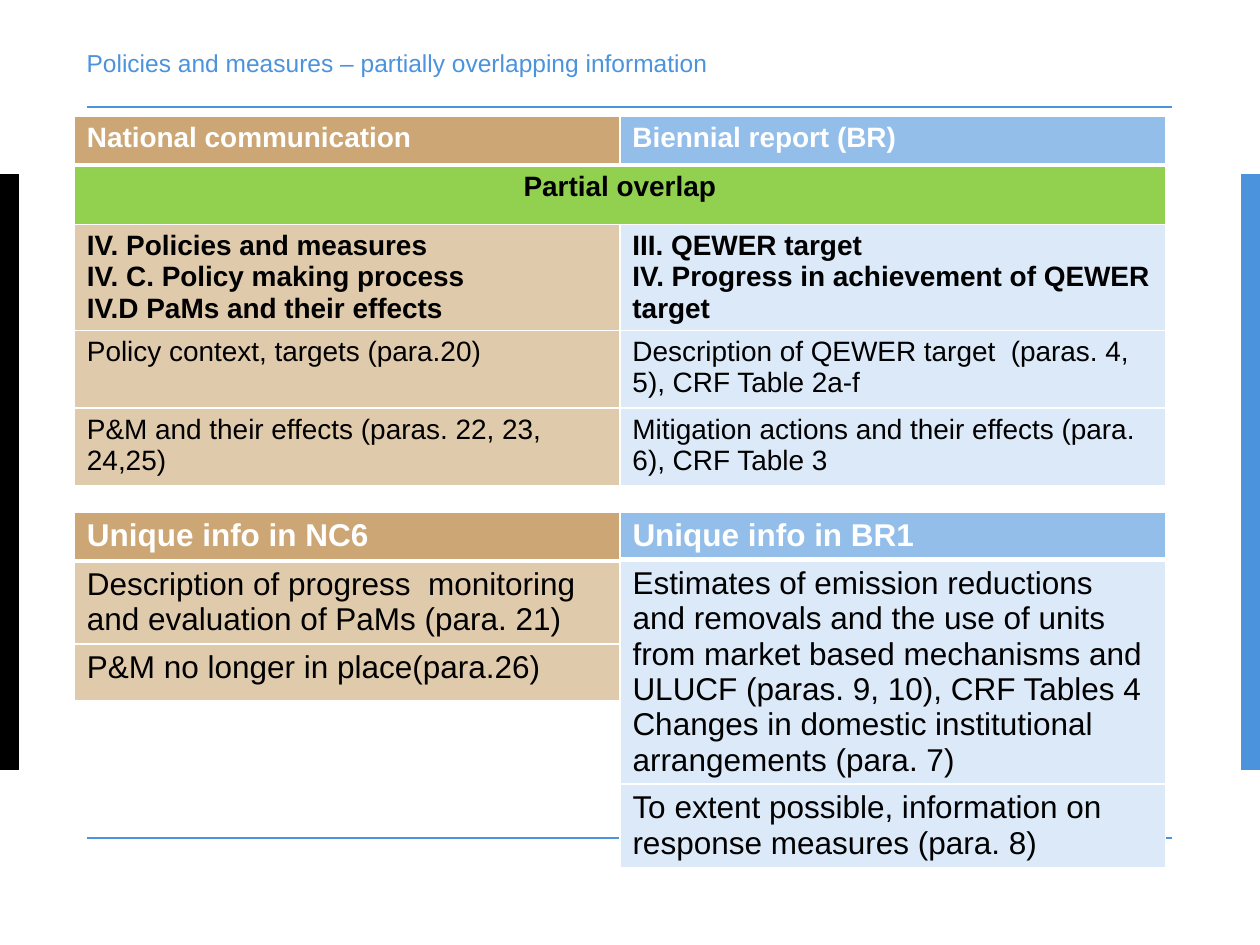
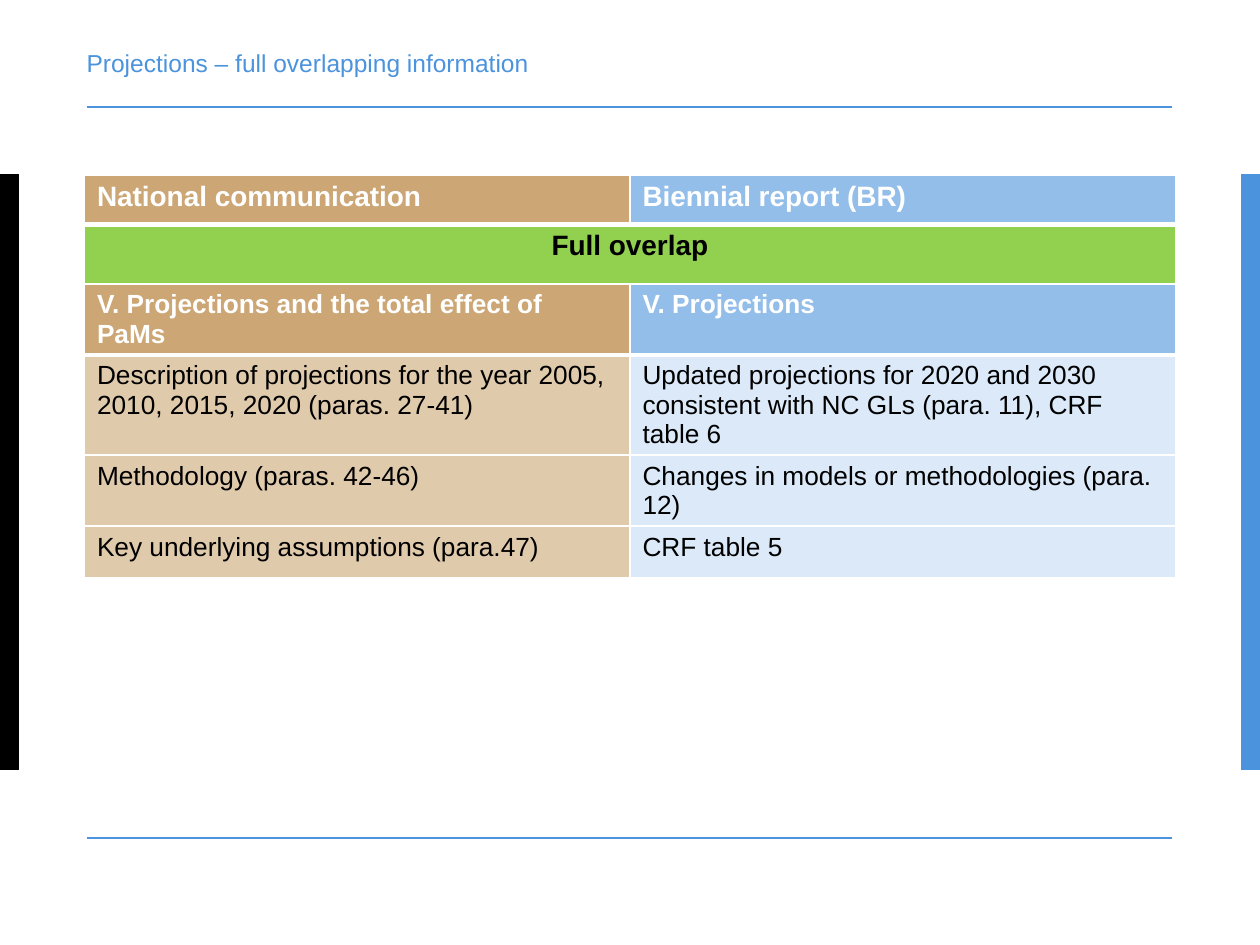
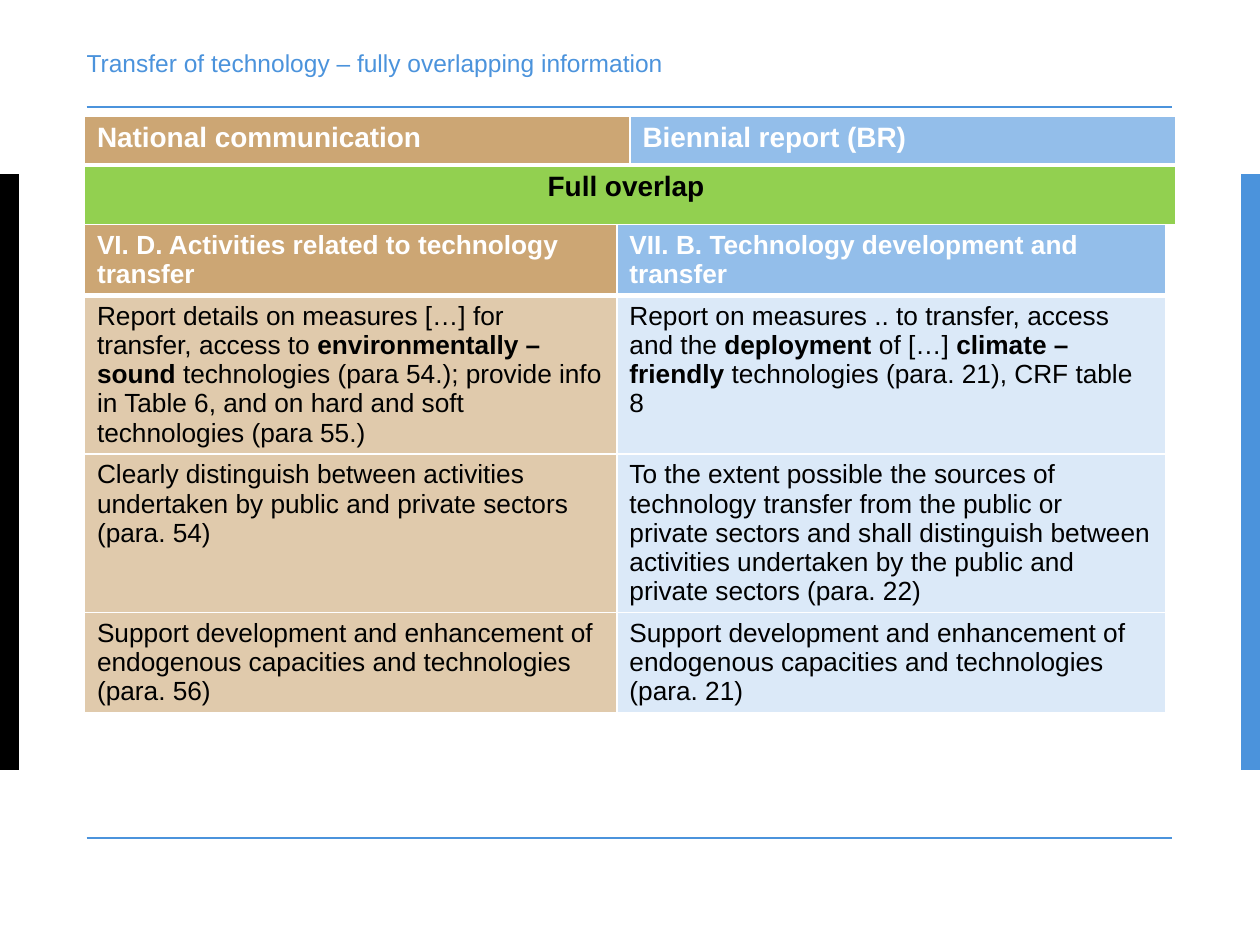
import dataclasses
from typing import Optional

import pptx
import pptx.dml.color
import pptx.enum.shapes
import pptx.enum.text
import pptx.oxml.xmlchemy
import pptx.presentation
import pptx.slide
import pptx.table
import pptx.util
from pptx.oxml import parse_xml
from pptx.oxml.ns import nsdecls

Pt = pptx.util.Pt


@dataclasses.dataclass(frozen=True)
class Theme:
    font: str = "Arial"
    blue: str = "4B93DC"
    black: str = "000000"
    white: str = "FFFFFF"
    green: str = "92D050"
    strong: tuple[str, str] = ("CCA674", "93BEEA")
    pale: tuple[str, str] = ("E0CAAC", "DBE9F8")
    title_size: float = 14
    detail_size: float = 15
    overview_size: float = 16
    unique_size: float = 18


THEME = Theme()


@dataclasses.dataclass(frozen=True)
class RowStyle:
    fills: tuple[str, str]
    ink: str
    bold: bool
    rule: float = 1
    merged: bool = False


HEAD = RowStyle(THEME.strong, THEME.white, True, rule=3)
BAND = RowStyle((THEME.green, THEME.green), THEME.black, True, merged=True)
SECTION = RowStyle(THEME.pale, THEME.black, True)
DETAIL = RowStyle(THEME.pale, THEME.black, False)


@dataclasses.dataclass(frozen=True)
class Row:
    """Texts from left to right; a newline parts paragraphs, asterisks mark bold."""
    style: RowStyle
    height: float
    texts: tuple[str, ...]


@dataclasses.dataclass(frozen=True)
class Comparison:
    left: float
    top: float
    widths: tuple[float, ...]
    size: float
    rows: tuple[Row, ...]
    first_side: int = 0  # 0 national communication, 1 biennial report


@dataclasses.dataclass(frozen=True)
class Page:
    title: str
    comparisons: tuple[Comparison, ...]


@dataclasses.dataclass(frozen=True)
class SideBar:
    left: float
    color: str


# Shared layout
SLIDE_WIDTH, SLIDE_HEIGHT = 720, 540
MARGIN, CONTENT_WIDTH = 49.5, 620
BAR_TOP, BAR_WIDTH, BAR_HEIGHT = 99.5, 10.8, 340.5
SIDE_BARS = (SideBar(0, THEME.black), SideBar(SLIDE_WIDTH - BAR_WIDTH, THEME.blue))
RULE_TOPS = (61.2, 478.8)
COLUMN = 311.75
WIDE_LEFT, TABLE_LEFT, TABLE_TOP = 42.5, 48.25, 66.25


def rgb(color: str) -> pptx.dml.color.RGBColor:
    return pptx.dml.color.RGBColor.from_string(color)


def overview_rows(overlap: str) -> tuple[Row, ...]:
    return (Row(HEAD, 28, ("National communication", "Biennial report (BR)")),
            Row(BAND, 34, (overlap,)))


def overview(top: float, overlap: str) -> Comparison:
    return Comparison(TABLE_LEFT, top, (COLUMN, COLUMN), THEME.overview_size,
                      overview_rows(overlap))


def draw_frame(slide: pptx.slide.Slide) -> None:
    for bar in SIDE_BARS:
        side = slide.shapes.add_shape(
            pptx.enum.shapes.MSO_SHAPE.RECTANGLE,
            Pt(bar.left), Pt(BAR_TOP), Pt(BAR_WIDTH), Pt(BAR_HEIGHT))
        side.shadow.inherit = False
        side.fill.solid()
        side.fill.fore_color.rgb = rgb(bar.color)
        side.line.fill.background()
    for top in RULE_TOPS:
        rule = slide.shapes.add_connector(
            pptx.enum.shapes.MSO_CONNECTOR.STRAIGHT,
            Pt(MARGIN), Pt(top), Pt(MARGIN + CONTENT_WIDTH), Pt(top))
        rule.line.color.rgb = rgb(THEME.blue)
        rule.line.width = Pt(1)
        rule._element.spPr.append(parse_xml(f"<a:effectLst {nsdecls('a')}/>"))


def set_title(slide: pptx.slide.Slide, text: str) -> None:
    title = slide.shapes.title
    title.left, title.top = Pt(MARGIN), Pt(24.5)
    title.width, title.height = Pt(CONTENT_WIDTH), Pt(24.5)
    frame = title.text_frame
    frame.text = text
    frame.word_wrap = True
    frame.auto_size = pptx.enum.text.MSO_AUTO_SIZE.NONE
    frame.vertical_anchor = pptx.enum.text.MSO_ANCHOR.MIDDLE
    frame.margin_left = frame.margin_right = frame.margin_top = frame.margin_bottom = 0
    heading = frame.paragraphs[0]
    heading.alignment = pptx.enum.text.PP_ALIGN.LEFT
    heading.line_spacing = Pt(15)
    for run in heading.runs:
        style_font(run.font, THEME.title_size, THEME.blue, False)


def style_font(font: "pptx.text.text.Font", size: float, color: str, bold: bool) -> None:
    font.name = THEME.font
    font.size = Pt(size)
    font.bold = bold
    font.color.rgb = rgb(color)


def set_borders(cell: pptx.table._Cell, bottom: float, top: Optional[float]) -> None:
    """Rules come before the fill, so call this first."""
    properties = cell._tc.get_or_add_tcPr()
    for side, width in (("L", 1), ("R", 1), ("T", top), ("B", bottom)):
        if width is not None:
            properties.append(parse_xml(
                f'<a:ln{side} {nsdecls("a")} w="{Pt(width)}"><a:solidFill>'
                f'<a:srgbClr val="{THEME.white}"/></a:solidFill></a:ln{side}>'))


def write_cell(cell: pptx.table._Cell, text: str, style: RowStyle, size: float) -> None:
    frame = cell.text_frame
    for number, line in enumerate(text.split("\n")):
        paragraph = frame.add_paragraph() if number else frame.paragraphs[0]
        if style.merged:
            paragraph.alignment = pptx.enum.text.PP_ALIGN.CENTER
        for part, words in enumerate(line.split("*")):
            run = paragraph.add_run()
            run.text = words
            style_font(run.font, size, style.ink, style.bold or part % 2 == 1)


def draw_comparison(slide: pptx.slide.Slide, comparison: Comparison) -> None:
    rows, widths = comparison.rows, comparison.widths
    table = slide.shapes.add_table(
        len(rows), len(widths), Pt(comparison.left), Pt(comparison.top),
        Pt(sum(widths)), Pt(sum(row.height for row in rows))).table
    table.first_row = table.horz_banding = False
    for column, width in zip(table.columns, widths):
        column.width = Pt(width)
    for index, row in enumerate(rows):
        table.rows[index].height = Pt(row.height)
        for side in range(len(widths)):
            cell = table.cell(index, side)
            set_borders(cell, row.style.rule, None if index else 1)
            cell.fill.solid()
            cell.fill.fore_color.rgb = rgb(row.style.fills[comparison.first_side + side])
        if row.style.merged:
            table.cell(index, 0).merge(table.cell(index, len(widths) - 1))
        for side, text in enumerate(row.texts):
            write_cell(table.cell(index, side), text, row.style, comparison.size)


# Content
POLICIES = Page("Policies and measures – partially overlapping information", (
    Comparison(WIDE_LEFT, TABLE_TOP, (COLUMN, COLUMN), THEME.overview_size, (
        *overview_rows("Partial overlap"),
        Row(SECTION, 44.5, (
            "IV. Policies and measures\nIV. C. Policy making process\n"
            "IV.D PaMs and their effects",
            "III. QEWER target\nIV. Progress in achievement of QEWER target")),
        Row(DETAIL, 44.5, (
            "Policy context, targets (para.20)",
            "Description of QEWER target  (paras. 4, 5), CRF Table 2a-f")),
        Row(DETAIL, 44.5, (
            "P&M and their effects (paras. 22, 23, 24,25)",
            "Mitigation actions and their effects (para. 6), CRF Table 3")),
    )),
    Comparison(WIDE_LEFT, 292.5, (COLUMN,), THEME.unique_size, (
        Row(HEAD, 28, ("Unique info in NC6",)),
        Row(DETAIL, 28, (
            "Description of progress  monitoring and evaluation of PaMs (para. 21)",)),
        Row(DETAIL, 32.25, ("P&M no longer in place(para.26)",)),
    )),
    Comparison(WIDE_LEFT + COLUMN, 292.5, (COLUMN,), THEME.unique_size, (
        Row(HEAD, 26, ("Unique info in BR1",)),
        Row(DETAIL, 22.5, (
            "Estimates of emission reductions and removals and the use of units from "
            "market based mechanisms and ULUCF (paras. 9, 10), CRF Tables 4\n"
            "Changes in domestic institutional arrangements (para. 7)",)),
        Row(DETAIL, 29.5, (
            "To extent possible, information on response measures (para. 8)",)),
    ), first_side=1),
))

PROJECTIONS = Page("Projections – full overlapping information", (
    Comparison(TABLE_LEFT, 162.25, (COLUMN, COLUMN), THEME.detail_size, (
        Row(HEAD, 29.5, ("V. Projections and the total effect of PaMs", "V. Projections")),
        Row(DETAIL, 29.5, (
            "Description of projections for the year 2005, 2010, 2015, 2020 (paras. 27-41)",
            "Updated projections for 2020 and 2030 consistent with NC GLs (para. 11), "
            "CRF table 6")),
        Row(DETAIL, 29.5, (
            "Methodology (paras. 42-46)", "Changes in models or methodologies (para. 12)")),
        Row(DETAIL, 29.5, ("Key underlying assumptions (para.47)", "CRF table 5")),
    )),
    overview(100.25, "Full overlap"),
))

TECHNOLOGY = Page("Transfer of technology – fully overlapping information", (
    Comparison(TABLE_LEFT, 128.25, (304.25, 313.75), THEME.detail_size, (
        Row(HEAD, 29.5, (
            "VI. D. Activities related to technology transfer",
            "VII. B. Technology development and transfer")),
        Row(DETAIL, 88, (
            "Report details on measures […] for transfer, access to *environmentally –sound "
            "*technologies (para 54.); provide info in Table 6, and on hard and soft "
            "technologies (para 55.)",
            "Report on measures .. to transfer, access  and the *deployment* of […] "
            "*climate –friendly *technologies (para. 21), CRF table 8")),
        Row(DETAIL, 29.5, (
            "Clearly distinguish between activities undertaken by public and private "
            "sectors  (para. 54)",
            "To the extent possible the sources of technology transfer from the public or  "
            "private sectors and shall distinguish between activities undertaken by the "
            "public and private sectors (para. 22)")),
        Row(DETAIL, 29.5, tuple(
            "Support development and enhancement of endogenous capacities and technologies "
            f"(para. {number})" for number in (56, 21))),
    )),
    overview(TABLE_TOP, "Full overlap "),
))


def add_page(deck: pptx.presentation.Presentation, page: Page) -> None:
    slide = deck.slides.add_slide(deck.slide_layouts.get_by_name("Title Only"))
    draw_frame(slide)
    set_title(slide, page.title)
    for comparison in page.comparisons:
        draw_comparison(slide, comparison)


def main() -> None:
    deck = pptx.Presentation()
    deck.slide_width, deck.slide_height = Pt(SLIDE_WIDTH), Pt(SLIDE_HEIGHT)
    for page in (POLICIES, PROJECTIONS, TECHNOLOGY):
        add_page(deck, page)
    deck.save("out.pptx")


if __name__ == "__main__":
    main()
